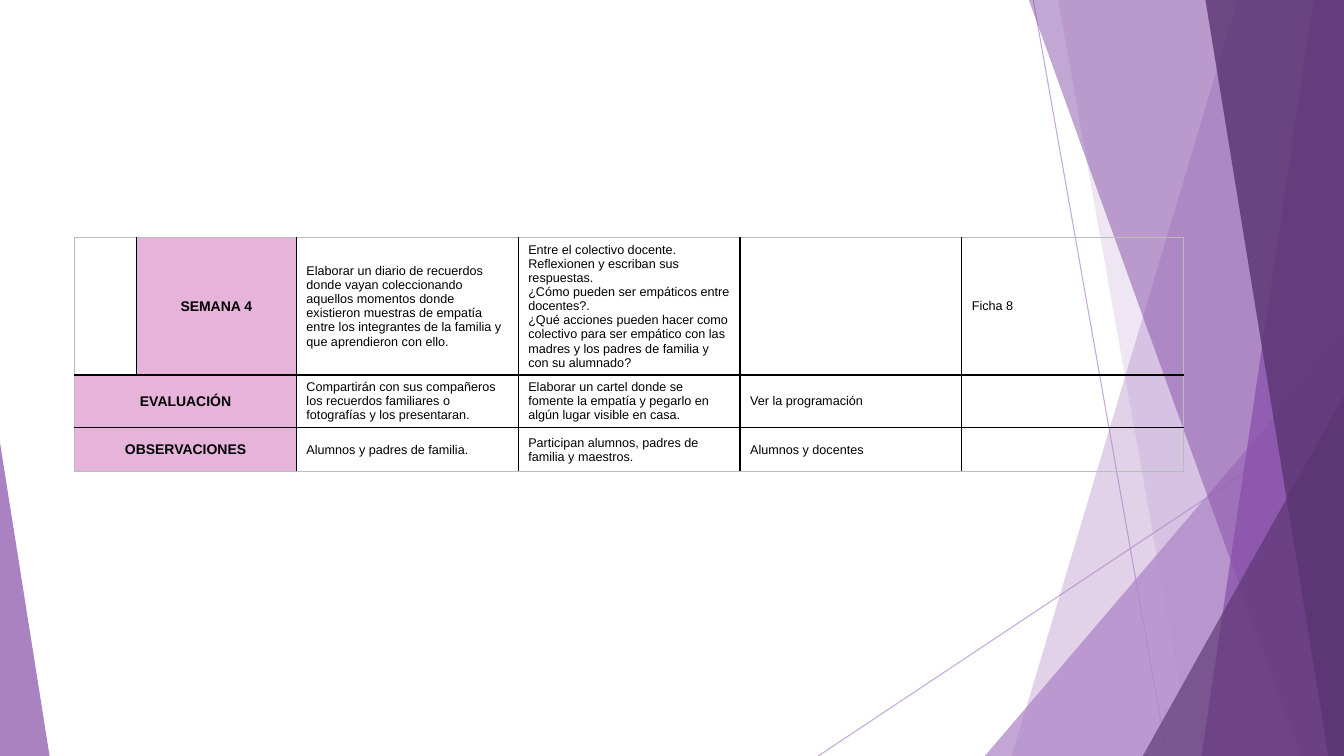
from lxml import etree
from pptx import Presentation
from pptx.dml.color import RGBColor
from pptx.enum.shapes import MSO_CONNECTOR, MSO_SHAPE
from pptx.enum.text import MSO_ANCHOR, PP_ALIGN
from pptx.oxml import parse_xml
from pptx.oxml.ns import nsdecls, qn
from pptx.util import Cm, Pt

WIDTH, HEIGHT = 33.87, 19.05
LILAC, PURPLE, PLUM = "AD84C6", "874EA9", "5A3471"
PINK, BLACK, GRAY = "E6B4DB", "000000", "BBBBBB"


def color(value):
    return RGBColor.from_string(value)


def write_text(frame, text, size=9, bold=False, align=PP_ALIGN.LEFT):
    for index, line in enumerate(text.split("\n")):
        paragraph = frame.paragraphs[0] if index == 0 else frame.add_paragraph()
        paragraph.alignment = align
        run = paragraph.add_run()
        run.text = line
        run.font.name = "Arial"
        run.font.size = Pt(size)
        run.font.bold = bold
        run.font.color.rgb = color(BLACK)


def set_opacity(fill_format, percent):
    color_element = fill_format._xPr.find(qn("a:solidFill"))[0]
    etree.SubElement(color_element, qn("a:alpha"), val=str(percent * 1000))


class SlideBuilder:
    def __init__(self, slide):
        self.slide = slide

    def paint(self, shape, fill, opacity):
        shape.shadow.inherit = False
        shape.fill.solid()
        shape.fill.fore_color.rgb = color(fill)
        set_opacity(shape.fill, opacity)
        shape.line.fill.background()

    def line(self, start, end):
        points = [Cm(value) for value in (*start, *end)]
        connector = self.slide.shapes.add_connector(MSO_CONNECTOR.STRAIGHT, *points)
        connector.line.width = Pt(0.75)
        connector.line.color.rgb = color(LILAC)
        set_opacity(connector.line.fill, 70)
        etree.SubElement(connector._element.spPr, qn("a:effectLst"))

    def band(self, top_x, bottom_x, fill, opacity):
        """Full-height panel from a slanted left edge to the right of the slide."""
        corners = [(WIDTH, 0), (WIDTH, HEIGHT), (bottom_x, HEIGHT)]
        builder = self.slide.shapes.build_freeform(Cm(top_x), Cm(0))
        builder.add_line_segments([(Cm(x), Cm(y)) for x, y in corners], close=True)
        self.paint(builder.convert_to_shape(), fill, opacity)

    def corner(self, left, top, width, apex, fill, opacity):
        """Triangle standing on the bottom edge of the slide."""
        shape = self.slide.shapes.add_shape(
            MSO_SHAPE.ISOSCELES_TRIANGLE,
            Cm(left), Cm(top), Cm(width), Cm(HEIGHT - top))
        shape.adjustments[0] = apex
        self.paint(shape, fill, opacity)

    def table(self, left, top, widths, heights, rows):
        table = self.slide.shapes.add_table(
            len(heights), len(widths), Cm(left), Cm(top),
            Cm(sum(widths)), Cm(sum(heights))).table
        table.first_row = table.horz_banding = False
        for column, width in zip(table.columns, widths):
            column.width = Cm(width)
        for row, height in zip(table.rows, heights):
            row.height = Cm(height)
        last_row, last_column = len(heights) - 1, len(widths) - 1
        for r, texts in enumerate(rows):
            for c, text in enumerate(texts):
                cell = table.cell(r, c)
                self.cell(cell, text or "", heading=bool(text) and c < 2)
                self.borders(cell, L=c == 0, R=c == last_column,
                             T=r == 0, B=r == last_row)
            if texts[1] is None:
                table.cell(r, 0).merge(table.cell(r, 1))

    def cell(self, cell, text, heading):
        cell.vertical_anchor = MSO_ANCHOR.MIDDLE
        if heading:
            cell.fill.solid()
            cell.fill.fore_color.rgb = color(PINK)
            write_text(cell.text_frame, text, size=10, bold=True, align=PP_ALIGN.CENTER)
        else:
            cell.fill.background()
            if text:
                write_text(cell.text_frame, text)

    def borders(self, cell, **outer_sides):
        properties = cell._tc.get_or_add_tcPr()
        for index, (side, outer) in enumerate(outer_sides.items()):
            properties.insert(index, parse_xml(
                f'<a:ln{side} {nsdecls("a")} w="{Pt(1)}"><a:solidFill>'
                f'<a:srgbClr val="{GRAY if outer else BLACK}"/>'
                f'</a:solidFill></a:ln{side}>'))


def main():
    presentation = Presentation()
    presentation.slide_width, presentation.slide_height = Cm(WIDTH), Cm(HEIGHT)
    slide = presentation.slides.add_slide(presentation.slide_layouts[6])
    builder = SlideBuilder(slide)

    # Background facets, from back to front
    builder.line((26.04, 0), (29.41, HEIGHT))
    builder.line((WIDTH, 10.24), (20.62, HEIGHT))
    builder.band(31.19, 25.5, LILAC, 36)
    builder.band(26.67, 30.05, LILAC, 20)
    builder.corner(24.82, 8.46, 9.05, 1, LILAC, 72)
    builder.band(25.93, 32.79, PURPLE, 50)
    builder.band(33.1, 30.28, PURPLE, 70)
    builder.band(30.38, 33.48, PLUM, 80)
    builder.corner(28.8, 9.98, 5.07, 1, PLUM, 66)
    builder.corner(0, 11.15, 1.25, 0, PURPLE, 70)

    # Weekly plan; None marks a cell merged into its left neighbour
    builder.table(1.88, 5.99, [1.55, 4.04] + [5.59] * 4, [3.46, 1.33, 1.11], [
        ["", "SEMANA 4",
         "Elaborar un diario de recuerdos donde vayan coleccionando aquellos "
         "momentos donde existieron muestras de empatía entre los integrantes "
         "de la familia y que aprendieron con ello.",
         "Entre el colectivo docente.\n"
         "Reflexionen y escriban sus respuestas.\n"
         "¿Cómo pueden ser empáticos entre docentes?.\n"
         "¿Qué acciones pueden hacer como colectivo para ser empático con las "
         "madres y los padres de familia y con su alumnado?",
         "", "Ficha 8"],
        ["EVALUACIÓN", None,
         "Compartirán con sus compañeros los recuerdos familiares o "
         "fotografías y los presentaran.",
         "Elaborar un cartel donde se fomente la empatía y pegarlo en algún "
         "lugar visible en casa.",
         "Ver la programación", ""],
        ["OBSERVACIONES", None,
         "Alumnos y padres de familia.",
         "Participan alumnos, padres de familia y maestros.",
         "Alumnos y docentes", ""],
    ])

    presentation.save("out.pptx")


if __name__ == "__main__":
    main()
